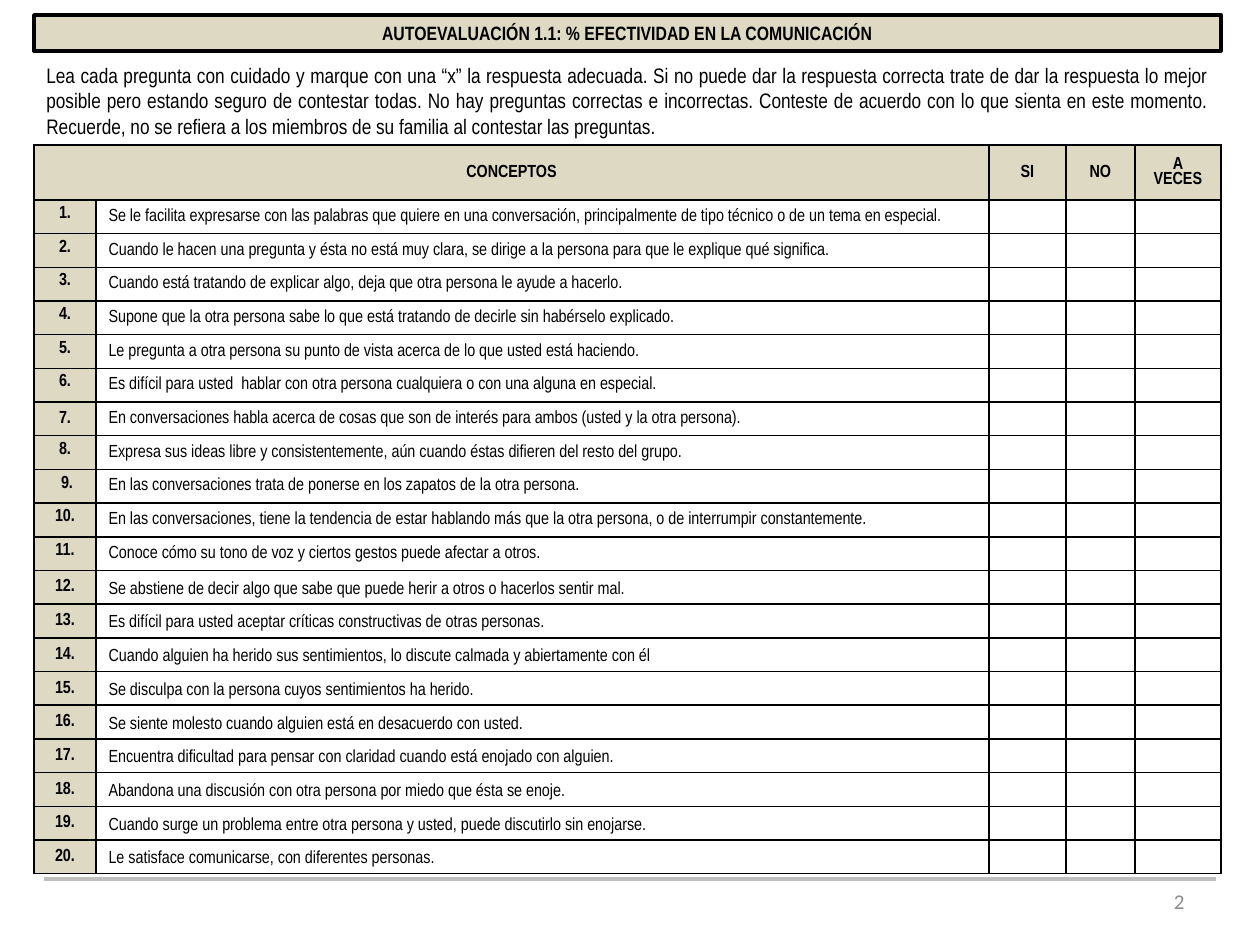
from lxml.etree import SubElement as Sub
from pptx import Presentation
from pptx.dml.color import RGBColor as Rgb
from pptx.enum.shapes import MSO_CONNECTOR as Conn
from pptx.enum.text import MSO_ANCHOR as Anc, MSO_AUTO_SIZE as Auto, PP_ALIGN as Al
from pptx.oxml.ns import qn
from pptx.util import Emu, Pt

# Content
TITLE = "AUTOEVALUACIÓN 1.1: % EFECTIVIDAD EN LA COMUNICACIÓN"
INTRO = (
    "Lea cada pregunta con cuidado y marque con una “x” la respuesta adecuada. "
    "Si no puede dar la respuesta correcta trate de dar la respuesta lo mejor posible "
    "pero estando seguro de contestar todas. No hay preguntas correctas e incorrectas. "
    "Conteste de acuerdo con lo que sienta en este momento. Recuerde, no se refiera a "
    "los miembros de su familia al contestar las preguntas."
)
HEADS = ["CONCEPTOS", "", "SI", "NO", "A VECES"]
ITEMS = [
    "Se le facilita expresarse con las palabras que quiere en una conversación, "
    "principalmente de tipo técnico o de un tema en especial.",
    "Cuando le hacen una pregunta y ésta no está muy clara, se dirige a la persona "
    "para que le explique qué significa.",
    "Cuando está tratando de explicar algo, deja que otra persona le ayude a hacerlo.",
    "Supone que la otra persona sabe lo que está tratando de decirle sin habérselo explicado.",
    "Le pregunta a otra persona su punto de vista acerca de lo que usted está haciendo.",
    "Es difícil para usted  hablar con otra persona cualquiera o con una alguna en especial.",
    "En conversaciones habla acerca de cosas que son de interés para ambos "
    "(usted y la otra persona).",
    "Expresa sus ideas libre y consistentemente, aún cuando éstas difieren del resto del grupo.",
    "En las conversaciones trata de ponerse en los zapatos de la otra persona.",
    "En las conversaciones, tiene la tendencia de estar hablando más que la otra persona, "
    "o de interrumpir constantemente.",
    "Conoce cómo su tono de voz y ciertos gestos puede afectar a otros.",
    "Se abstiene de decir algo que sabe que puede herir a otros o hacerlos sentir mal.",
    "Es difícil para usted aceptar críticas constructivas de otras personas.",
    "Cuando alguien ha herido sus sentimientos, lo discute calmada y abiertamente con él",
    "Se disculpa con la persona cuyos sentimientos ha herido.",
    "Se siente molesto cuando alguien está en desacuerdo con usted.",
    "Encuentra dificultad para pensar con claridad cuando está enojado con alguien.",
    "Abandona una discusión con otra persona por miedo que ésta se enoje.",
    "Cuando surge un problema entre otra persona y usted, puede discutirlo sin enojarse.",
    "Le satisface comunicarse, con diferentes personas.",
]
COLORS = {"ink": "000000", "sand": "DDD9C3", "white": "FFFFFF", "rule": "BFBFBF", "page": "8C8C8C"}

# Layout in px
LEFT, WIDE = 34, 1187
COLS = [62, 893, 77, 69, 86]
TOP, HEAD, TALL = 145, 55, 727
ROW = (TALL - HEAD) / len(ITEMS)
SPLIT = 11  # later items sit at the foot of their rows
TIGHT = 0.95


def px(n):
    return Emu(round(n * 914400 / 126))


def color(name):
    return Rgb.from_string(COLORS[name])


def paint(fill, name):
    fill.solid()
    fill.fore_color.rgb = color(name)


def write(frame, text, size=10, font="Arial Narrow", ink="ink", bold=False,
          align=Al.CENTER, space=None):
    par = frame.paragraphs[0]
    par.alignment = align
    par.line_spacing = space
    run = par.add_run()
    run.text = text
    run.font.size, run.font.name, run.font.bold = Pt(size), font, bold
    run.font.color.rgb = color(ink)


def add_box(x, y, w, h):
    frame = slide.shapes.add_textbox(px(x), px(y), px(w), px(h)).text_frame
    frame.word_wrap = True
    frame.vertical_anchor = Anc.MIDDLE
    return frame


def set_cell(cell, text, fill, anchor=Anc.MIDDLE, **form):
    props = cell._tc.get_or_add_tcPr()
    for side in ("lnL", "lnR", "lnT", "lnB"):
        line = Sub(props, qn(f"a:{side}"), w=str(Pt(1)))
        Sub(Sub(line, qn("a:solidFill")), qn("a:srgbClr"), val=COLORS["ink"])
    paint(cell.fill, fill)
    cell.vertical_anchor = anchor
    if text:
        write(cell.text_frame, text, **form)
    else:  # keeps blank cells from stretching the row
        Sub(cell.text_frame.paragraphs[0]._p, qn("a:endParaRPr"), sz="1000")


prs = Presentation()
prs.slide_width, prs.slide_height = px(1260), px(945)
slide = prs.slides.add_slide(prs.slide_layouts[5])

# Footer rule and page number
rule = slide.shapes.add_connector(Conn.STRAIGHT, px(44), px(879), px(1216), px(879))
rule.line.color.rgb = color("rule")
rule.line.width = Pt(2)
Sub(rule._element.spPr, qn("a:effectLst"))
write(add_box(903, 876, 294, 50), "2", size=12, font="Calibri", ink="page", align=Al.RIGHT)

# Title bar
title = slide.shapes.title
title.left, title.top, title.width, title.height = px(LEFT), px(15), px(WIDE), px(36)
paint(title.fill, "sand")
title.line.color.rgb = color("ink")
title.line.width = Pt(2)
title.text_frame.auto_size = Auto.NONE
title.text_frame.vertical_anchor = Anc.MIDDLE
write(title.text_frame, TITLE, size=11, bold=True)

# Instructions
write(add_box(LEFT, 56, WIDE, 89), INTRO, size=12, align=Al.JUSTIFY)

# Questionnaire
table = slide.shapes.add_table(len(ITEMS) + 1, len(COLS), px(LEFT), px(TOP),
                               px(WIDE), px(TALL)).table
table.first_row = table.horz_banding = False
for col, wide in zip(table.columns, COLS):
    col.width = px(wide)
for i, row in enumerate(table.rows):
    row.height = px(ROW if i else HEAD)

table.cell(0, 0).merge(table.cell(0, 1))
for j, head in enumerate(HEADS):
    set_cell(table.cell(0, j), head, "sand", bold=True, space=TIGHT)

for i, item in enumerate(ITEMS, 1):
    late = i > SPLIT
    mark = " 9." if i == 9 else f"{i}."
    set_cell(table.cell(i, 0), mark, "sand", Anc.MIDDLE if late or i == 7 else Anc.TOP,
             bold=True, space=TIGHT)
    set_cell(table.cell(i, 1), item, "white", Anc.BOTTOM if late else Anc.MIDDLE,
             align=Al.JUSTIFY)
    for j in range(2, len(COLS)):
        set_cell(table.cell(i, j), "", "white")

prs.save("out.pptx")
